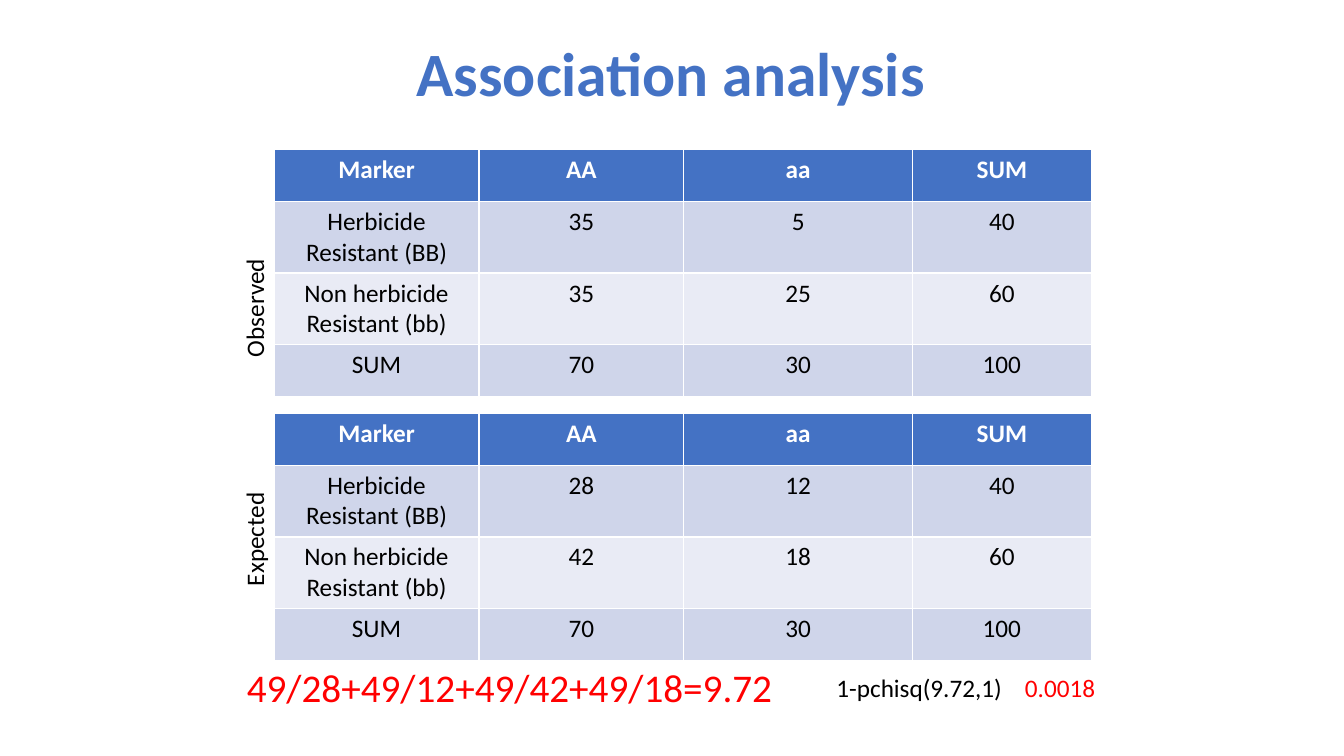
from dataclasses import dataclass

from pptx import Presentation
from pptx.dml.color import RGBColor
from pptx.enum.text import MSO_ANCHOR, MSO_AUTO_SIZE, PP_ALIGN
from pptx.util import Cm, Pt


@dataclass(frozen=True)
class Theme:
    font: str = "Calibri"
    blue: RGBColor = RGBColor(0x44, 0x72, 0xC4)
    dark_band: RGBColor = RGBColor(0xCF, 0xD5, 0xEA)
    light_band: RGBColor = RGBColor(0xE9, 0xEB, 0xF5)
    white: RGBColor = RGBColor(0xFF, 0xFF, 0xFF)
    black: RGBColor = RGBColor(0x00, 0x00, 0x00)
    red: RGBColor = RGBColor(0xFF, 0x00, 0x00)
    title: Pt = Pt(44)
    formula: Pt = Pt(28)
    body: Pt = Pt(18)


theme = Theme()


def style(para, size, color, bold=False, align=PP_ALIGN.CENTER):
    para.alignment = align
    para.font.name = theme.font
    para.font.size = size
    para.font.bold = bold
    para.font.color.rgb = color


def add_text(text, left, top, width, height, size, color,
             bold=False, align=PP_ALIGN.LEFT, wrap=True):
    box = page.shapes.add_textbox(Cm(left), Cm(top), Cm(width), Cm(height))
    box.text_frame.word_wrap = wrap
    box.text_frame.auto_size = MSO_AUTO_SIZE.SHAPE_TO_FIT_TEXT
    box.text_frame.text = text
    style(box.text_frame.paragraphs[0], size, color, bold, align)
    return box


deck = Presentation()
deck.slide_width, deck.slide_height = Cm(33.87), Cm(19.05)
page = deck.slides.add_slide(deck.slide_layouts[6])

# Title
title = add_text("Association analysis", 2.31, 0.08, 29.21, 3.68,
                 theme.title, theme.blue, bold=True, align=PP_ALIGN.CENTER)
title.text_frame.auto_size = MSO_AUTO_SIZE.NONE
title.text_frame.vertical_anchor = MSO_ANCHOR.MIDDLE
title.text_frame.paragraphs[0].line_spacing = 0.9

# Observed and expected counts, each with a sideways label
header = ["Marker", "AA", "aa", "SUM"]
row_names = ["Herbicide Resistant (BB)", "Non herbicide\nResistant (bb)", "SUM"]
column_widths = [5.16, 5.16, 5.77, 4.5]
row_heights = [1.31, 1.81, 1.81, 1.31]
row_fills = [theme.blue, theme.dark_band, theme.light_band, theme.dark_band]
count_tables = [
    ("Observed", 3.76, 6.17, PP_ALIGN.LEFT,
     [(35, 5, 40), (35, 25, 60), (70, 30, 100)]),
    ("Expected", 10.41, 13.08, PP_ALIGN.CENTER,
     [(28, 12, 40), (42, 18, 60), (70, 30, 100)]),
]
for label, table_top, label_top, label_align, counts in count_tables:
    table = page.shapes.add_table(
        len(row_heights), len(column_widths), Cm(6.91), Cm(table_top),
        Cm(sum(column_widths)), Cm(sum(row_heights))).table
    for column, width in zip(table.columns, column_widths):
        column.width = Cm(width)
    for row, height in zip(table.rows, row_heights):
        row.height = Cm(height)

    rows = [header] + [[name, *values] for name, values in zip(row_names, counts)]
    for row_index, values in enumerate(rows):
        is_header = row_index == 0
        for column_index, value in enumerate(values):
            cell = table.cell(row_index, column_index)
            cell.fill.solid()
            cell.fill.fore_color.rgb = row_fills[row_index]
            cell.text = str(value)
            for para in cell.text_frame.paragraphs:
                style(para, theme.body,
                      theme.white if is_header else theme.black, is_header)

    side_label = add_text(label, 3.84, label_top, 5.13, 1.02,
                          theme.body, theme.black, align=label_align)
    side_label.rotation = 270

# Chi-square sum and its p-value
add_text("49/28+49/12+49/42+49/18=9.72", 4.52, 16.59, 16.64, 1.45,
         theme.formula, theme.red, align=PP_ALIGN.CENTER)
add_text("1-pchisq(9.72,1)", 20.83, 16.81, 5.13, 1.02, theme.body, theme.black)
add_text("0.0018", 25.58, 16.81, 2.31, 1.02, theme.body, theme.red, wrap=False)

deck.save("out.pptx")
